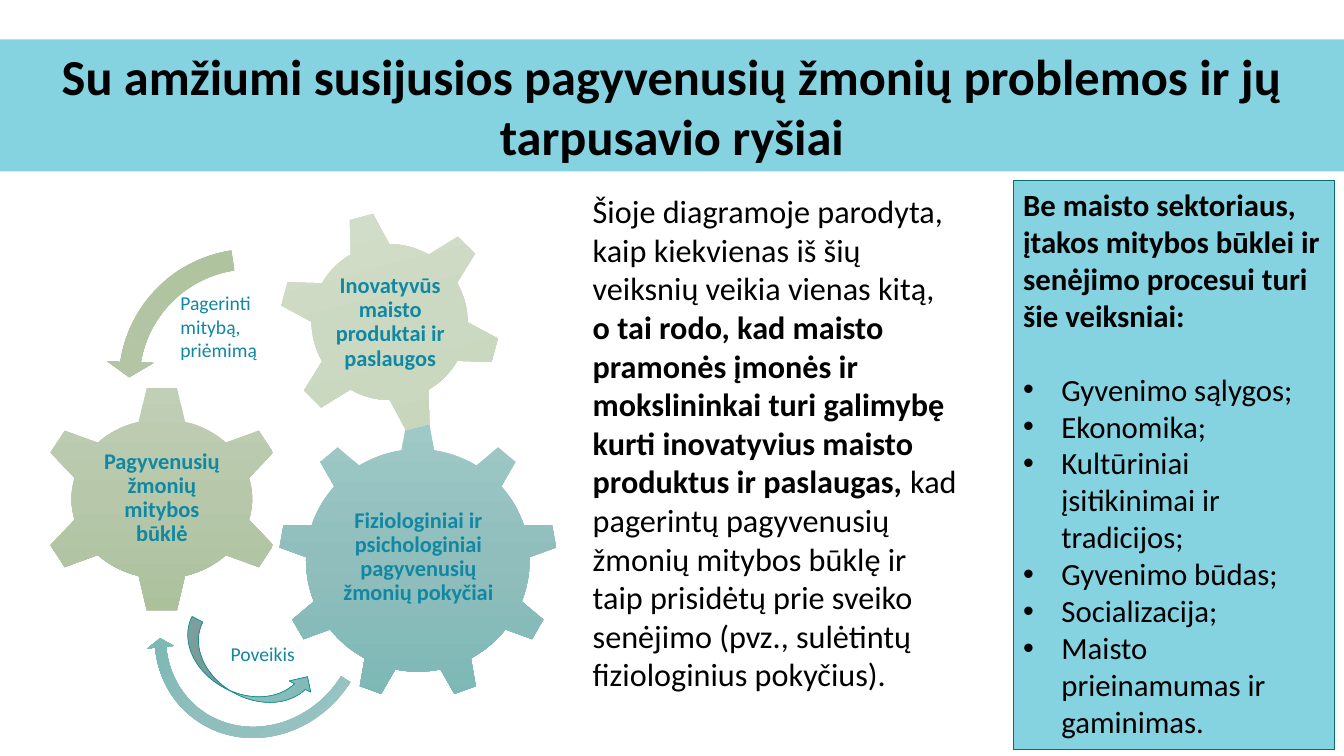
from copy import deepcopy

from lxml import etree
from pptx import Presentation
from pptx.dml.color import RGBColor
from pptx.enum.shapes import MSO_SHAPE as Preset
from pptx.enum.text import MSO_ANCHOR as Anchor, MSO_AUTO_SIZE as AutoSize, PP_ALIGN as Align
from pptx.oxml.ns import qn
from pptx.util import Inches, Pt

FONT = "Calibri"
BLACK = RGBColor(0x00, 0x00, 0x00)
AQUA = RGBColor(0x85, 0xD2, 0xE1)
LABEL_BLUE = RGBColor(0x11, 0x88, 0xA3)
ARROW_EDGE = RGBColor(0x0D, 0x93, 0x90)
PANEL_EDGE = RGBColor(0x08, 0x6D, 0x6E)
# Gradients from top to bottom
TEAL = [RGBColor(0x9E, 0xC9, 0xC7), RGBColor(0x90, 0xBE, 0xBC), RGBColor(0x7C, 0xB8, 0xB5)]
SAGE = [RGBColor(0xC1, 0xCF, 0xB6), RGBColor(0xB6, 0xC7, 0xAA), RGBColor(0xAB, 0xC1, 0x9C)]
PALE = [RGBColor(0xD6, 0xE0, 0xCD), RGBColor(0xCC, 0xD9, 0xC2), RGBColor(0xC6, 0xD5, 0xB9)]
MOSS = [RGBColor(0xAC, 0xC1, 0x99), SAGE[1], SAGE[2]]

deck = Presentation()
deck.slide_width, deck.slide_height = Inches(13.33), Inches(7.5)
page = deck.slides.add_slide(deck.slide_layouts[5])


def area(left, top, width, height):
    """Turn percentages of the slide into lengths."""
    across, down = deck.slide_width / 100, deck.slide_height / 100
    return int(left * across), int(top * down), int(width * across), int(height * down)


def style(para, size, color=BLACK, bold=False):
    font = para.font
    font.name, font.size, font.bold = FONT, Pt(size), bold
    font.color.rgb = color


# Title band
title = page.shapes.title
title.left, title.top, title.width, title.height = area(0, 5.2, 100, 17.47)
title.fill.solid()
title.fill.fore_color.rgb = AQUA
frame = title.text_frame
frame.text = "Su amžiumi susijusios pagyvenusių žmonių problemos ir jų tarpusavio ryšiai"
frame.auto_size, frame.vertical_anchor = AutoSize.NONE, Anchor.MIDDLE
frame.paragraphs[0].alignment = Align.CENTER
style(frame.paragraphs[0], 36, bold=True)

# Gears and arrows: preset, place, rotation, adjustments, colours, stops, edge
EVEN = (0, 0.5, 1)
PARTS = [
    (Preset.GEAR_9, (20.7, 55.73, 20.78, 36.8), 0, [], TEAL, EVEN, None),
    (Preset.GEAR_6, (2.78, 50.93, 18.53, 30.13), 0, [], SAGE, EVEN, None),
    (Preset.GEAR_6, (20.7, 27.87, 16.58, 29.47), 345, [], PALE, EVEN, None),
    (Preset.CIRCULAR_ARROW, (10.5, 68.4, 17.93, 29.47), 127.3,
     [0.05, 2.99, 25.35, 158.21, 0.06], TEAL, (0.01, 0.5, 0.67), None),
    (Preset.LEFT_CIRCULAR_ARROW, (7.88, 31.2, 21.61, 38.4), 14.1,
     [0.07, 4.3, 104.89, 148.38, 0.08], MOSS, (0, 0.75, 1), None),
    (Preset.CURVED_RIGHT_ARROW, (16.35, 79.33, 3.6, 18.8), 297.6, [], TEAL, EVEN, ARROW_EDGE),
]
for preset, place, rotation, adjustments, colors, stops, edge in PARTS:
    part = page.shapes.add_shape(preset, *area(*place))
    part.shadow.inherit = False
    part.rotation = rotation
    for index, value in enumerate(adjustments):
        part.adjustments[index] = value
    part.fill.gradient()
    part.fill.gradient_angle = 270
    stop_list = part.fill._fill._gradFill.find(qn("a:gsLst"))
    stop_list.append(deepcopy(stop_list[-1]))
    for stop, color, position in zip(part.fill.gradient_stops, colors, stops):
        stop.color.rgb, stop.position = color, position
    if edge is None:
        part.line.fill.background()
    else:
        part.line.color.rgb, part.line.width = edge, Pt(0.5)

# Gear labels
GEAR_LABELS = [
    ("Fiziologiniai ir psichologiniai pagyvenusių žmonių pokyčiai", (24.91, 64.27, 12.45, 18.93)),
    ("Pagyvenusių žmonių mitybos būklė", (7.28, 58.53, 9.53, 14.8)),
    ("Inovatyvūs maisto produktai ir paslaugos", (24.38, 34.4, 9.3, 16.53)),
]
for words, place in GEAR_LABELS:
    frame = page.shapes.add_textbox(*area(*place)).text_frame
    frame.word_wrap, frame.vertical_anchor = True, Anchor.MIDDLE
    frame.margin_left = frame.margin_right = frame.margin_top = frame.margin_bottom = Inches(0.02)
    frame.text = words
    para = frame.paragraphs[0]
    para.alignment, para.line_spacing = Align.CENTER, 0.9
    style(para, 16, LABEL_BLUE, True)

# Arrow labels
ARROW_LABELS = [
    ("Pagerinti\nmitybą,\npriėmimą", (12.68, 37.87, 9.3, 10.8), True),
    ("Poveikis", (16.43, 84.27, 6.38, 4.53), False),
]
for words, place, wrap in ARROW_LABELS:
    frame = page.shapes.add_textbox(*area(*place)).text_frame
    frame.word_wrap = wrap
    frame.text = words
    for para in frame.paragraphs:
        style(para, 14, LABEL_BLUE)

# Explanation
frame = page.shapes.add_textbox(*area(43.36, 24.67, 28.58, 68.4)).text_frame
frame.word_wrap = True
para = frame.paragraphs[0]
style(para, 23)
for words, bold in [
    ("Šioje diagramoje parodyta, kaip kiekvienas iš šių veiksnių veikia vienas kitą, ", False),
    ("o tai rodo, kad maisto pramonės įmonės ir mokslininkai turi galimybę kurti "
     "inovatyvius maisto produktus ir paslaugas,", True),
    (" kad pagerintų pagyvenusių žmonių mitybos būklę ir taip prisidėtų prie sveiko "
     "senėjimo (pvz., sulėtintų fiziologinius pokyčius).", False),
]:
    span = para.add_run()
    span.text, span.font.bold = words, bold

# Factor panel
panel = page.shapes.add_shape(Preset.RECTANGLE, *area(75.39, 23.87, 23.93, 75.33))
panel.shadow.inherit = False
panel.fill.solid()
panel.fill.fore_color.rgb = AQUA
panel.line.color.rgb, panel.line.width = PANEL_EDGE, Pt(0.5)
frame = panel.text_frame
frame.word_wrap, frame.vertical_anchor = True, Anchor.TOP
heading = frame.paragraphs[0]
heading.text = "Be maisto sektoriaus, įtakos mitybos būklei ir senėjimo procesui turi šie veiksniai:"
heading.alignment, heading.space_after = Align.LEFT, Pt(26.5)
style(heading, 22, bold=True)
for factor in [
    "Gyvenimo sąlygos;",
    "Ekonomika;",
    "Kultūriniai įsitikinimai ir tradicijos;",
    "Gyvenimo būdas;",
    "Socializacija;",
    "Maisto prieinamumas ir gaminimas.",
]:
    para = frame.add_paragraph()
    para.text, para.alignment = factor, Align.LEFT
    settings = para._p.get_or_add_pPr()
    settings.set("marL", str(Inches(0.38)))
    settings.set("indent", str(-Inches(0.38)))
    etree.SubElement(settings, qn("a:buFont")).set("typeface", "Arial")
    etree.SubElement(settings, qn("a:buChar")).set("char", "•")
    style(para, 22)

deck.save("out.pptx")
